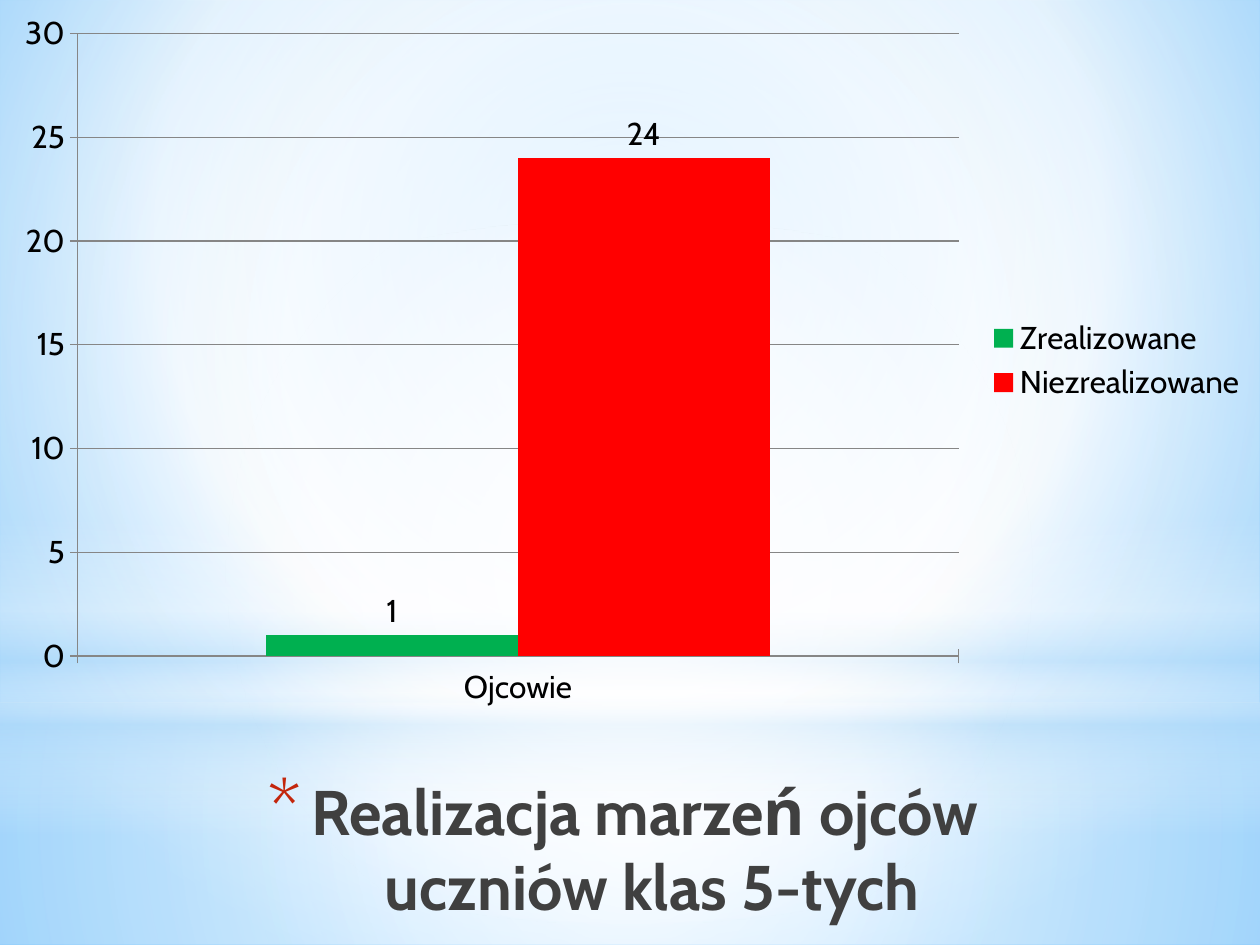
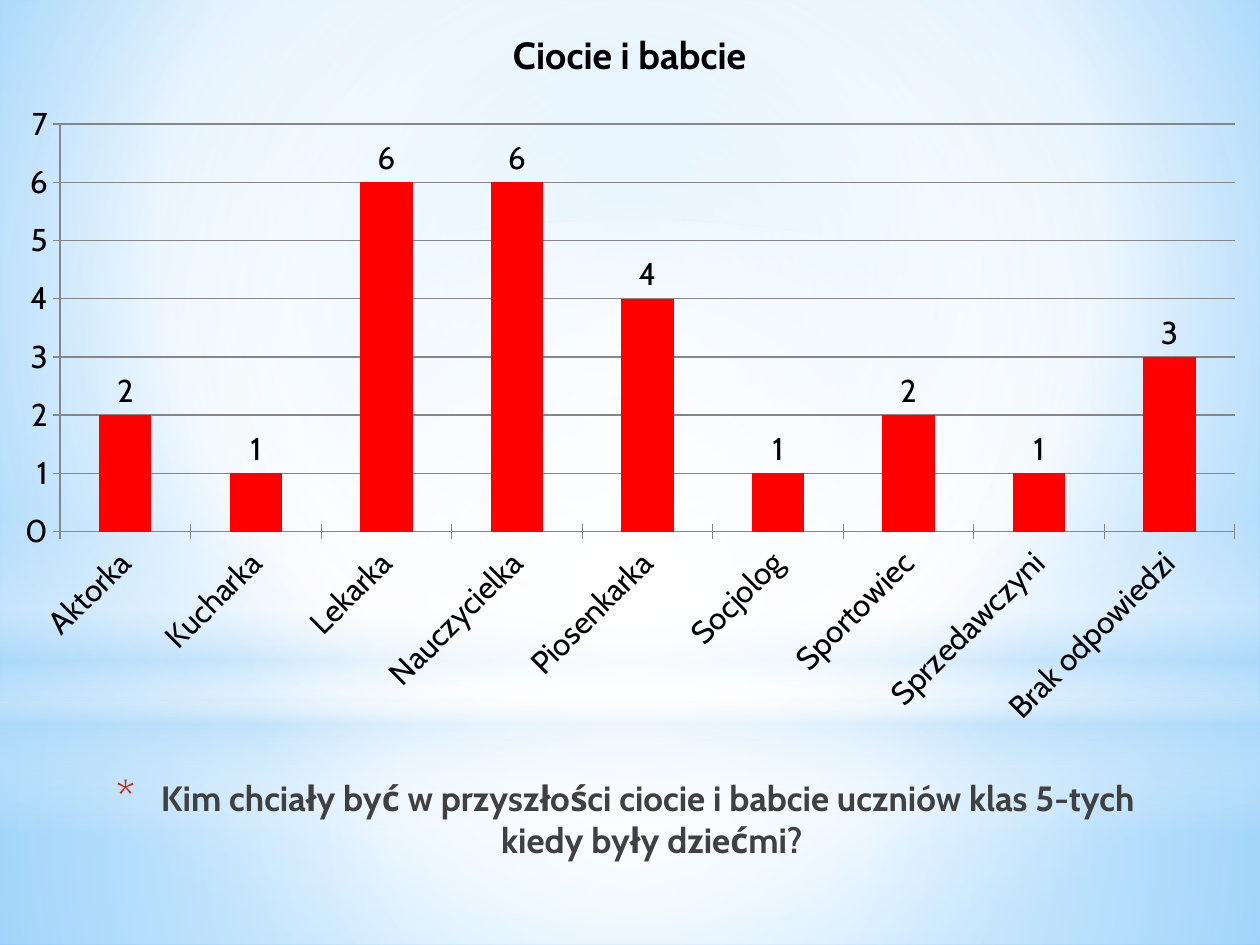
from dataclasses import dataclass

from lxml.etree import SubElement
from pptx import Presentation
from pptx.chart.data import CategoryChartData
from pptx.dml.color import RGBColor
from pptx.enum.chart import XL_CHART_TYPE as ChartType
from pptx.enum.chart import XL_LABEL_POSITION as LabelPosition
from pptx.enum.chart import XL_LEGEND_POSITION as LegendPosition
from pptx.enum.chart import XL_TICK_MARK as TickMark
from pptx.enum.shapes import MSO_SHAPE as Preset
from pptx.enum.text import MSO_ANCHOR as Anchor
from pptx.enum.text import MSO_AUTO_SIZE as AutoSize
from pptx.enum.text import PP_ALIGN as Align
from pptx.oxml.ns import qn
from pptx.util import Pt


@dataclass(frozen=True)
class Theme:
    font: str = "Cabin"
    white: str = "FFFFFF"
    pale: str = "B4DCFA"
    sky: str = "9ED5FF"
    deep_sky: str = "5BB9FF"
    title: str = "404040"
    bullet: str = "C3260C"
    text: str = "000000"
    axis: str = "868686"
    green: str = "00B050"
    red: str = "FF0000"
    chart_size: float = 18
    chart_title_size: float = 21.6


theme = Theme()
CENTRE = (50, 50, 50, 50)


def px(count):
    return round(count * 914400 / 126)


def gradient(parent, place, stops, focus):
    fill = SubElement(parent, qn("a:gradFill"), rotWithShape="1")
    parent.insert(place, fill)
    stop_list = SubElement(fill, qn("a:gsLst"))
    for position, color, opacity in stops:
        stop = SubElement(stop_list, qn("a:gs"), pos=str(position * 1000))
        shade = SubElement(stop, qn("a:srgbClr"), val=color)
        if opacity < 100:
            SubElement(shade, qn("a:alpha"), val=str(opacity * 1000))
    if focus:
        circle = SubElement(fill, qn("a:path"), path="circle")
        edges = {side: str(share * 1000) for side, share in zip("ltrb", focus)}
        SubElement(circle, qn("a:fillToRect"), **edges)
    else:
        SubElement(fill, qn("a:lin"), ang="5400000", scaled="0")


deck = Presentation()
deck.slide_width, deck.slide_height = px(1260), px(945)
master = deck.slide_master
title_only = deck.slide_layouts[5]

master.background.fill.background()
backdrop = master._element.find(".//" + qn("p:bgPr"))
backdrop.remove(backdrop[0])
sky_stops = [(0, theme.sky, 100), (60, theme.white, 100), (100, theme.deep_sky, 100)]
gradient(backdrop, 0, sky_stops, (20, 10, 20, 60))

bands = [
    (Preset.RECTANGLE, 703, 242, CENTRE,
     [(0, theme.white, 91), (37, theme.white, 76), (100, theme.pale, 79)]),
    (Preset.RECTANGLE, 0, 703, CENTRE,
     [(0, theme.white, 89), (48, theme.white, 62), (100, theme.pale, 79)]),
    (Preset.RECTANGLE, 519, 315, None,
     [(0, theme.white, 0), (29, theme.white, 30), (45, theme.pale, 40),
      (55, theme.white, 26), (65, theme.pale, 60), (100, theme.white, 0)]),
    (Preset.OVAL, 220, 703, CENTRE,
     [(0, theme.white, 100), (56, theme.white, 0)]),
]

pages = [
    dict(title="Realizacja marzeń ojców \nuczniów klas 5-tych", title_size=36,
         title_top=766, title_height=179, chart_height=721, chart_title=None,
         legend=True, label_angle=0, categories=["Ojcowie"],
         series=[("Zrealizowane", [1], theme.green),
                 ("Niezrealizowane", [24], theme.red)]),
    dict(title="Kim chciały być w przyszłości ciocie i babcie uczniów klas 5-tych \n"
               "kiedy były dziećmi?", title_size=20,
         title_top=770, title_height=127, chart_height=741,
         chart_title="Ciocie i babcie", legend=False, label_angle=-45,
         categories=["Aktorka", "Kucharka", "Lekarka", "Nauczycielka", "Piosenkarka",
                     "Socjolog", "Sportowiec", "Sprzedawczyni", "Brak odpowiedzi"],
         series=[("Ciocie i babcie", [2, 1, 6, 6, 4, 1, 2, 1, 3], theme.red)]),
]

for content in pages:
    page = deck.slides.add_slide(title_only)

    title = page.shapes.title
    title.left, title.top = 0, px(content["title_top"])
    title.width, title.height = px(1260), px(content["title_height"])
    frame = title.text_frame
    frame.word_wrap = True
    frame.auto_size = AutoSize.NONE
    frame.vertical_anchor = Anchor.TOP
    para = frame.paragraphs[0]
    para.text = content["title"]
    para.alignment = Align.CENTER
    for span in para.runs:
        span.font.name = theme.font
        span.font.size = Pt(content["title_size"])
        span.font.bold = True
        span.font.color.rgb = RGBColor.from_string(theme.title)
    for line_break in para._p.findall(qn("a:br")):
        SubElement(line_break, qn("a:rPr"), sz=str(content["title_size"] * 100))
    indents = para._p.get_or_add_pPr()
    indents.set("marL", str(px(44)))
    indents.set("indent", str(-px(44)))
    SubElement(SubElement(indents, qn("a:buClr")), qn("a:srgbClr"), val=theme.bullet)
    SubElement(indents, qn("a:buSzPct"), val="128000")
    SubElement(indents, qn("a:buFont"), typeface=theme.font)
    SubElement(indents, qn("a:buChar"), char="*")

    data = CategoryChartData()
    data.categories = content["categories"]
    for name, values, color in content["series"]:
        data.add_series(name, values)
    chart = page.shapes.add_chart(ChartType.COLUMN_CLUSTERED, 0, 0, px(1260),
                                  px(content["chart_height"]), data).chart
    chart.font.name = theme.font
    chart.font.size = Pt(theme.chart_size)
    chart.font.color.rgb = RGBColor.from_string(theme.text)

    chart.has_title = content["chart_title"] is not None
    if chart.has_title:
        heading = chart.chart_title.text_frame
        heading.text = content["chart_title"]
        font = heading.paragraphs[0].runs[0].font
        font.name = theme.font
        font.size = Pt(theme.chart_title_size)
        font.bold = True
        font.color.rgb = RGBColor.from_string(theme.text)

    chart.has_legend = content["legend"]
    if chart.has_legend:
        chart.legend.position = LegendPosition.RIGHT
        chart.legend.include_in_layout = False

    chart.value_axis.has_major_gridlines = True
    for axis in (chart.category_axis, chart.value_axis):
        axis.major_tick_mark = TickMark.CROSS
        axis.tick_labels.font.size = Pt(theme.chart_size)
    for ruled in (chart.category_axis, chart.value_axis, chart.value_axis.major_gridlines):
        ruled.format.line.color.rgb = RGBColor.from_string(theme.axis)
        ruled.format.line.width = Pt(0.75)
    label_body = chart.category_axis._element.find(qn("c:txPr")).find(qn("a:bodyPr"))
    label_body.set("rot", str(content["label_angle"] * 60000))
    label_body.set("vert", "horz")

    plot = chart.plots[0]
    plot.gap_width = 150
    plot.overlap = 0
    plot.vary_by_categories = False
    for series, (name, values, color) in zip(plot.series, content["series"]):
        series.format.fill.solid()
        series.format.fill.fore_color.rgb = RGBColor.from_string(color)
        series.data_labels.show_value = True
        series.data_labels.position = LabelPosition.OUTSIDE_END

    chart_space = chart._chartSpace
    plot_area = chart_space.find(".//" + qn("c:plotArea"))
    for area in (plot_area, chart_space):
        look = SubElement(area, qn("c:spPr"))
        SubElement(look, qn("a:noFill"))
        SubElement(SubElement(look, qn("a:ln")), qn("a:noFill"))
    chart_space.find(qn("c:txPr")).addprevious(look)

first_page = deck.slides[0]
for order, (preset, top, height, focus, stops) in enumerate(bands):
    band = first_page.shapes.add_shape(preset, 0, px(top), px(1260), px(height))
    band.shadow.inherit = False
    band.line.fill.background()
    gradient(band._element.spPr, 2, stops, focus)
    band._element.nvSpPr.cNvPr.set("id", str(20 + order))
    master.shapes._spTree.insert(2 + order, band._element)

deck.save("out.pptx")
